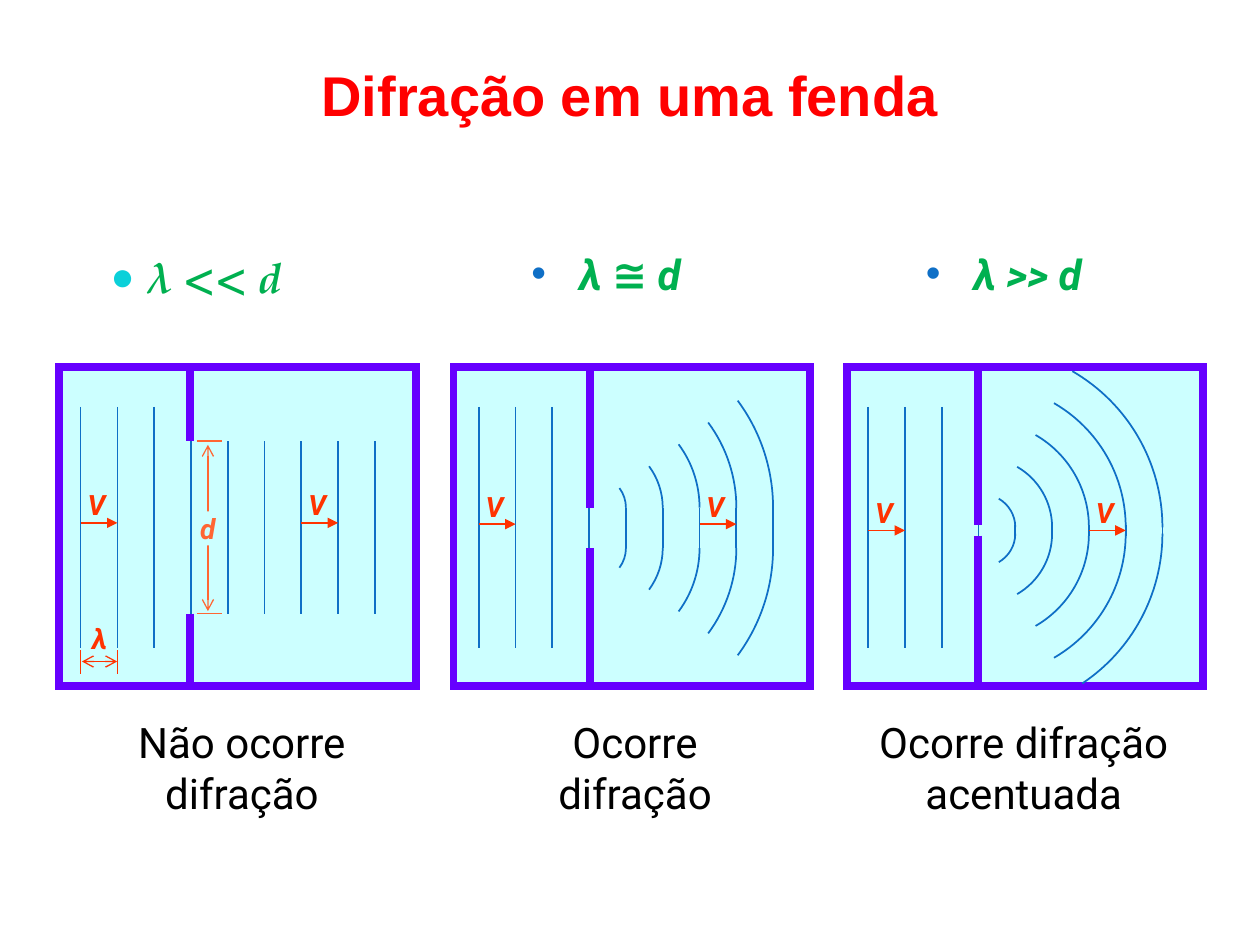
import math
from pptx import Presentation, util as u
from pptx.dml.color import RGBColor as Rgb
from pptx.enum import shapes, text as t
from pptx.oxml.ns import qn
from lxml import etree


class Theme:
    title, label, wall, water = "FF0000", "00B050", "6600FF", "CCFFFF"
    wave, speed, slit, ink, dot = "0F6FC6", "FF3300", "FF6633", "000000", "0BD0D9"
    head, body, mark = 32, 24, 16
    thick, thin, fine = 4.5, 1, 0.75
    sans, serif, bold = "Roboto", "TeX Gyre Pagella", "Arial"


deck = Presentation()
deck.slide_width, deck.slide_height = u.Inches(10), u.Inches(7.5)
slide = deck.slides.add_slide(deck.slide_layouts[5])
cell = deck.slide_width // 100


def write(words, at, box=None, size=Theme.body, font=Theme.sans, ink=Theme.ink,
          bold=False, slant=False, align=t.PP_ALIGN.CENTER, anchor=t.MSO_ANCHOR.TOP,
          pad=(1, 0.5, 1, 0.5), fill=None, bullet=None):
    place = [round(v * cell) for v in at]
    box = box or slide.shapes.add_textbox(*place)
    box.left, box.top, box.width, box.height = place
    if fill:
        box.fill.solid()
        box.fill.fore_color.rgb = Rgb.from_string(fill)
    frame = box.text_frame
    frame.word_wrap, frame.auto_size = True, t.MSO_AUTO_SIZE.NONE
    frame.vertical_anchor = anchor
    (frame.margin_left, frame.margin_top,
     frame.margin_right, frame.margin_bottom) = [round(v * cell) for v in pad]
    para = frame.paragraphs[0]
    para.alignment = align
    run = para.add_run()
    run.text = words
    run.font.name, run.font.size = font, u.Pt(size)
    run.font.bold, run.font.italic = bold, slant
    run.font.color.rgb = Rgb.from_string(ink)
    if bullet:
        sign, tint, share, dent = bullet
        props = para._p.get_or_add_pPr()
        props.set("marL", str(round(dent * cell)))
        props.set("indent", str(-round(dent * cell)))
        color = etree.SubElement(props, qn("a:buClr"))
        etree.SubElement(color, qn("a:srgbClr")).set("val", tint)
        etree.SubElement(props, qn("a:buSzPct")).set("val", str(share * 1000))
        etree.SubElement(props, qn("a:buFont")).set("typeface", Theme.bold)
        etree.SubElement(props, qn("a:buChar")).set("char", sign)


def draw(x1, y1, x2, y2, ink=Theme.wave, width=Theme.thin, head=None, tail=None):
    line = slide.shapes.add_connector(
        shapes.MSO_CONNECTOR.STRAIGHT, *[round(v * cell) for v in (x1, y1, x2, y2)])
    line.line.color.rgb = Rgb.from_string(ink)
    line.line.width = u.Pt(width)
    props = line.element.spPr
    for tag, kind in (("a:headEnd", head), ("a:tailEnd", tail)):
        if kind:
            etree.SubElement(props.find(qn("a:ln")), qn(tag)).set("type", kind)
    etree.SubElement(props, qn("a:effectLst"))


write("Difração em uma fenda", (0, 4.7, 100, 5.4), box=slide.shapes.title,
      size=Theme.head, font=Theme.bold, ink=Theme.title, bold=True,
      anchor=t.MSO_ANCHOR.BOTTOM, pad=(0, 0.5, 0, 0))

small = ("•", Theme.wave, 100, 3.8)
large = ("●", Theme.dot, 95, 3)
for words, at, font, bullet in (
        ("λ << d", (7.8, 19.5, 19.4, 5.4), Theme.serif, large),
        ("λ ≅ d", (41.2, 19.2, 18.3, 5), Theme.sans, small),
        ("λ >> d", (72.5, 19.2, 18.3, 5), Theme.sans, small)):
    write(words, at, font=font, ink=Theme.label, bold=True, slant=True,
          align=t.PP_ALIGN.LEFT, bullet=bullet)

step = 2.92
top, wide, high = 29.15, 28.3, 25.3
base = top + high
mark = dict(size=Theme.mark, bold=True, slant=True, pad=(0, 0, 0, 0))
panels = (
    (4.7, 6.4, 15.1, 35, 48.7, 41.5, None),
    (36, 38, 46.8, 40.3, 43.5, 41.6, (36.5, 36.5, 0)),
    (67.2, 68.9, 77.6, 41.7, 42.5, 42.1, (60, 56.3, 0.15)),
)
for left, first, wall, upper, lower, mid, bend in panels:
    tank = slide.shapes.add_shape(
        shapes.MSO_SHAPE.RECTANGLE, *[round(v * cell) for v in (left, top, wide, high)])
    tank.shadow.inherit = False
    tank.fill.solid()
    tank.fill.fore_color.rgb = Rgb.from_string(Theme.water)
    tank.line.color.rgb = Rgb.from_string(Theme.wall)
    tank.line.width = u.Pt(Theme.thick)
    edge = tank.element.spPr.find(qn("a:ln"))
    etree.SubElement(edge, qn("a:miter")).set("lim", "800000")
    draw(wall, top, wall, upper, Theme.wall, Theme.thick)
    draw(wall, lower, wall, base, Theme.wall, Theme.thick)

    for n in range(9):
        x = first + n * step
        start, end = (32.3, 51.4) if n < 3 else (upper, lower)
        draw(x, start, x, end)

    if bend:
        rise, fall, inset = bend
        hub = first + 3 * step + 0.3
        for n in range(5):
            ray = (n + 1) * step - 0.3
            for y, sign, sweep in ((upper + inset, -1, rise),
                                   (lower - inset, 1, fall if n == 4 else rise)):
                turn = math.radians(sweep)
                pull = 4 / 3 * math.tan(turn / 4)
                cos, sin = math.cos(turn), math.sin(turn)
                knots = [(round((hub + ray * a) * cell), round((y + sign * ray * b) * cell))
                         for a, b in ((0, 0), (cos, sin),
                                      (cos + pull * sin, sin - pull * cos),
                                      (1, pull), (1, 0))]
                sketch = slide.shapes.build_freeform(*knots[0])
                sketch.move_to(*knots[1])
                sketch.add_line_segments(knots[2:], close=False)
                arc = sketch.convert_to_shape()
                trace = next(arc.element.iter(qn("a:path")))
                trace.remove(trace[0])
                curve = etree.SubElement(trace, qn("a:cubicBezTo"))
                for leg in trace.findall(qn("a:lnTo")):
                    curve.append(leg[0])
                    trace.remove(leg)
                arc.shadow.inherit = False
                arc.fill.background()
                arc.line.color.rgb = Rgb.from_string(Theme.wave)
                arc.line.width = u.Pt(Theme.thin)

    for n in (0, 6):
        x = first + n * step
        draw(x, mid, x + step, mid, Theme.speed, Theme.fine, tail="triangle")
        write("V", (x, mid - 2.8, 2.5, 2.7), ink=Theme.speed,
              anchor=t.MSO_ANCHOR.MIDDLE, **mark)

for words, at in (("Não ocorre difração", (9.2, 56.4, 20, 9.7)),
                  ("Ocorre difração", (40.4, 56.4, 20, 9.7)),
                  ("Ocorre difração acentuada", (67.2, 56.4, 28.1, 10))):
    write(words, at)

for y in (35, 48.7):
    draw(15.6, y, 17.6, y, Theme.slit, Theme.fine)
draw(16.5, 35.3, 16.5, 48.5, Theme.slit, Theme.fine, "arrow", "arrow")
write("d", (15.3, 40.6, 2.4, 2.7), ink=Theme.slit, fill=Theme.water, **mark)

for x in (6.4, 9.3):
    draw(x, 51.6, x, 53.5, Theme.speed, Theme.fine)
draw(9.3, 52.5, 6.5, 52.5, Theme.speed, Theme.fine, "arrow", "arrow")
write("λ", (6.7, 49.3, 2.4, 2.7), ink=Theme.speed, fill=Theme.water, **mark)

deck.save("out.pptx")
